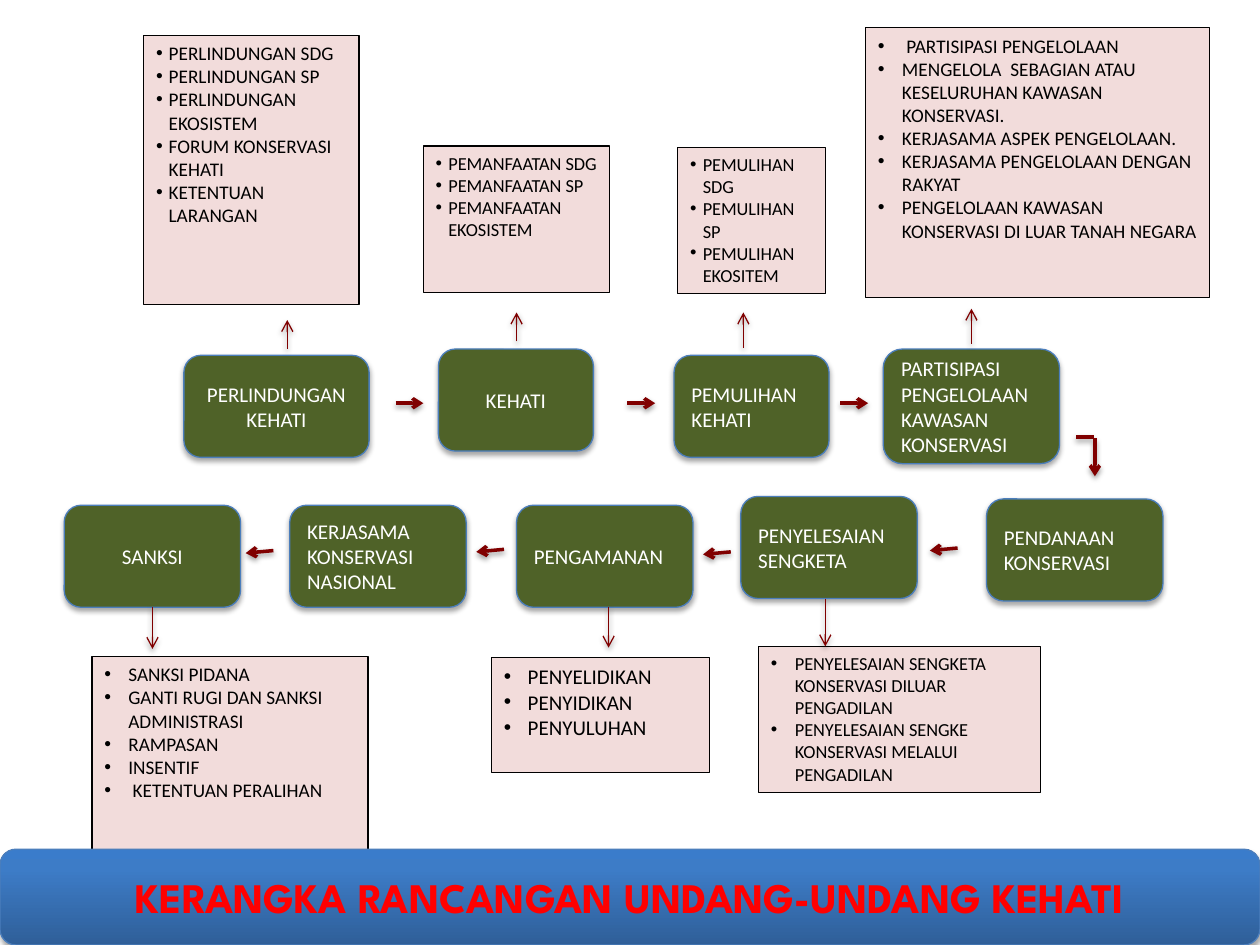
from dataclasses import dataclass

from pptx import Presentation
from pptx.dml.color import RGBColor
from pptx.enum.shapes import MSO_CONNECTOR, MSO_SHAPE
from pptx.enum.text import MSO_ANCHOR, PP_ALIGN
from pptx.oxml import parse_xml
from pptx.oxml.ns import nsdecls, qn
from pptx.util import Inches, Pt

RECT, ROUNDED = MSO_SHAPE.RECTANGLE, MSO_SHAPE.ROUNDED_RECTANGLE
STRAIGHT = MSO_CONNECTOR.STRAIGHT
TOP, MIDDLE = MSO_ANCHOR.TOP, MSO_ANCHOR.MIDDLE
LEFT, CENTER = PP_ALIGN.LEFT, PP_ALIGN.CENTER
BOTTOM_SIDE = 2


@dataclass(frozen=True)
class Theme:
    stage: str = "4F6228"
    stage_line: str = "4B7EBC"
    detail: str = "F2DCDB"
    ink: str = "000000"
    light: str = "FFFFFF"
    arrow: str = "800000"
    title: str = "FF0000"
    banner: tuple = ((0, "2F5F99"), (80, "3D7CC7"), (100, "3A7CCB"))
    font: str = "Calibri"
    title_font: str = "League Spartan"
    stage_size: float = 12
    title_size: float = 24
    thin: float = 0.75
    thick: float = 2


@dataclass(frozen=True)
class Box:
    left: float
    top: float
    width: float
    height: float

    def inner(self, dx, dy, width, height):
        """Return a box placed relative to this one's top left corner."""
        return Box(self.left + dx, self.top + dy, width, height)


THEME = Theme()


def cast_shadow(drawn, distance, opacity):
    properties = drawn._element.spPr
    for old in properties.findall(qn("a:effectLst")):
        properties.remove(old)
    properties.append(parse_xml(
        f'<a:effectLst {nsdecls("a")}><a:outerShdw blurRad="{Pt(3.1)}" dist="{Pt(distance)}" '
        f'dir="5400000" rotWithShape="0"><a:srgbClr val="000000">'
        f'<a:alpha val="{opacity * 1000}"/></a:srgbClr></a:outerShdw></a:effectLst>'))


def add_box(slide, kind, box, fill, line):
    shape = slide.shapes.add_shape(kind, Inches(box.left), Inches(box.top),
                                   Inches(box.width), Inches(box.height))
    shape.shadow.inherit = False
    shape.fill.solid()
    shape.fill.fore_color.rgb = RGBColor.from_string(fill)
    shape.line.color.rgb = RGBColor.from_string(line)
    shape.line.width = Pt(THEME.thin)
    return shape


def write(shape, lines, *, size, color, font=THEME.font, bold=False,
          align=LEFT, anchor=MIDDLE, hanging=None):
    """Fill a shape with paragraphs, bulleted when a hanging indent is given."""
    frame = shape.text_frame
    frame.word_wrap = True
    frame.vertical_anchor = anchor
    for index, line in enumerate(lines):
        paragraph = frame.add_paragraph() if index else frame.paragraphs[0]
        paragraph.alignment = align
        run = paragraph.add_run()
        run.text = line
        run.font.name, run.font.size, run.font.bold = font, Pt(size), bold
        run.font.color.rgb = RGBColor.from_string(color)
        if hanging:
            properties = paragraph._p.get_or_add_pPr()
            properties.set("marL", str(Inches(hanging)))
            properties.set("indent", str(-Inches(hanging)))
            properties.append(parse_xml(f'<a:buFont {nsdecls("a")} typeface="Arial"/>'))
            properties.append(parse_xml(f'<a:buChar {nsdecls("a")} char="•"/>'))


def add_stage(slide, box, label, align=LEFT):
    stage = add_box(slide, ROUNDED, box, THEME.stage, THEME.stage_line)
    cast_shadow(stage, 1.8, 35)
    write(stage, [label], size=THEME.stage_size, color=THEME.light, align=align)
    return stage


def add_detail(slide, box, items, size, hanging):
    detail = add_box(slide, RECT, box, THEME.detail, THEME.ink)
    write(detail, items, size=size, color=THEME.ink, anchor=TOP, hanging=hanging)


def add_arrow(slide, box, start, end, width=THEME.thick, head=True):
    """Draw a line between two points relative to the box."""
    x1, y1, x2, y2 = (Inches(v) for v in (box.left + start[0], box.top + start[1],
                                          box.left + end[0], box.top + end[1]))
    arrow = slide.shapes.add_connector(STRAIGHT, x1, y1, x2, y2)
    arrow.line.color.rgb = RGBColor.from_string(THEME.arrow)
    arrow.line.width = Pt(width)
    if head:
        arrow.line._get_or_add_ln().append(
            parse_xml(f'<a:tailEnd {nsdecls("a")} type="arrow"/>'))
    cast_shadow(arrow, 1.6, 38)
    return arrow


def add_upper_row(slide, box):
    """Four stages running right, each pointing up to its details."""
    for dx, dy, width, height, label, align in (
            (0.32, 2.6, 1.47, 0.81, "PERLINDUNGAN KEHATI", CENTER),
            (2.34, 2.55, 1.23, 0.81, "KEHATI", CENTER),
            (4.21, 2.6, 1.23, 0.81, "PEMULIHAN KEHATI", LEFT),
            (5.87, 2.55, 1.4, 0.91, "PARTISIPASI PENGELOLAAN KAWASAN KONSERVASI", LEFT)):
        add_stage(slide, box.inner(dx, dy, width, height), label, align)

    for dx, dy, width, height, size, hanging, items in (
            (0, 0.06, 1.71, 2.14, 11, 0.1,
             ["PERLINDUNGAN SDG", "PERLINDUNGAN SP", "PERLINDUNGAN EKOSISTEM",
              "FORUM KONSERVASI KEHATI", "KETENTUAN LARANGAN"]),
            (2.22, 0.94, 1.48, 1.16, 10.5, 0.1,
             ["PEMANFAATAN SDG", "PEMANFAATAN SP", "PEMANFAATAN EKOSISTEM"]),
            (4.24, 0.95, 1.17, 1.16, 10.5, 0.1,
             ["PEMULIHAN SDG", "PEMULIHAN SP", "PEMULIHAN EKOSITEM"]),
            (5.73, 0, 2.73, 2.14, 11, 0.19,
             [" PARTISIPASI PENGELOLAAN",
              "MENGELOLA  SEBAGIAN ATAU KESELURUHAN KAWASAN KONSERVASI.",
              "KERJASAMA ASPEK PENGELOLAAN.", "KERJASAMA PENGELOLAAN DENGAN RAKYAT",
              "PENGELOLAAN KAWASAN KONSERVASI DI LUAR TANAH NEGARA"])):
        add_detail(slide, box.inner(dx, dy, width, height), items, size, hanging)

    for x in (2, 3.84, 5.53):
        add_arrow(slide, box, (x, 2.98), (x + 0.22, 2.98))
    for x, start, end in ((1.14, 2.55, 2.32), (2.96, 2.49, 2.26),
                          (4.76, 2.54, 2.26), (6.57, 2.51, 2.23)):
        add_arrow(slide, box, (x, start), (x, end), THEME.thin)
    add_arrow(slide, box, (7.4, 3.25), (7.54, 3.25), head=False)
    add_arrow(slide, box, (7.55, 3.26), (7.55, 3.56))


def add_lower_row(slide, box):
    """Five stages running left, three of them pointing down to details."""
    stages = [add_stage(slide, box.inner(dx, dy, 1.4, 0.81), label, align)
              for dx, dy, label, align in (
                  (0, 0.07, "SANKSI", CENTER),
                  (1.79, 0.07, "KERJASAMA KONSERVASI NASIONAL", LEFT),
                  (3.59, 0.07, "PENGAMANAN", LEFT),
                  (5.37, 0, "PENYELESAIAN SENGKETA", LEFT),
                  (7.32, 0.02, "PENDANAAN KONSERVASI", LEFT))]

    for dx, dy, width, height, size, items in (
            (0.22, 1.27, 2.19, 1.6, 11,
             ["SANKSI PIDANA", "GANTI RUGI DAN SANKSI ADMINISTRASI", "RAMPASAN",
              "INSENTIF", " KETENTUAN PERALIHAN"]),
            (3.39, 1.28, 1.73, 0.91, 12, ["PENYELIDIKAN", "PENYIDIKAN", "PENYULUHAN"]),
            (5.51, 1.19, 2.24, 1.16, 10.5,
             ["PENYELESAIAN SENGKETA KONSERVASI DILUAR PENGADILAN",
              "PENYELESAIAN SENGKE KONSERVASI MELALUI PENGADILAN"])):
        add_detail(slide, box.inner(dx, dy, width, height), items, size, 0.19)

    for x, y in ((1.66, 0.43), (3.49, 0.42), (5.29, 0.44), (7.09, 0.41)):
        add_arrow(slide, box, (x, y), (x - 0.22, y + 0.02))
    sanction_arrow = add_arrow(slide, box, (0.7, 0.88), (0.7, 1.21), THEME.thin)
    sanction_arrow.begin_connect(stages[0], BOTTOM_SIDE)
    for x, start, end in ((4.32, 0.88, 1.2), (6.04, 0.81, 1.19)):
        add_arrow(slide, box, (x, start), (x, end), THEME.thin)


def add_title_banner(slide, box, title):
    banner = add_box(slide, ROUNDED, box, THEME.stage_line, THEME.stage_line)
    banner.fill.gradient()
    banner.fill.gradient_angle = 90
    stops = banner._element.spPr.find(qn("a:gradFill")).find(qn("a:gsLst"))
    for old in list(stops):
        stops.remove(old)
    for position, color in THEME.banner:
        stops.append(parse_xml(f'<a:gs {nsdecls("a")} pos="{position * 1000}">'
                               f'<a:srgbClr val="{color}"/></a:gs>'))
    cast_shadow(banner, 1.8, 35)
    write(banner, [title], size=THEME.title_size, color=THEME.title,
          font=THEME.title_font, bold=True, align=CENTER)


def main():
    deck = Presentation()
    deck.slide_width, deck.slide_height = Inches(10), Inches(7.5)
    slide = deck.slides.add_slide(deck.slide_layouts[6])
    add_upper_row(slide, Box(1.14, 0.22, 8.46, 3.56))
    add_lower_row(slide, Box(0.51, 3.94, 8.72, 2.87))
    add_title_banner(slide, Box(0, 6.74, 10, 0.76), "KERANGKA RANCANGAN UNDANG-UNDANG KEHATI")
    deck.save("out.pptx")


if __name__ == "__main__":
    main()
